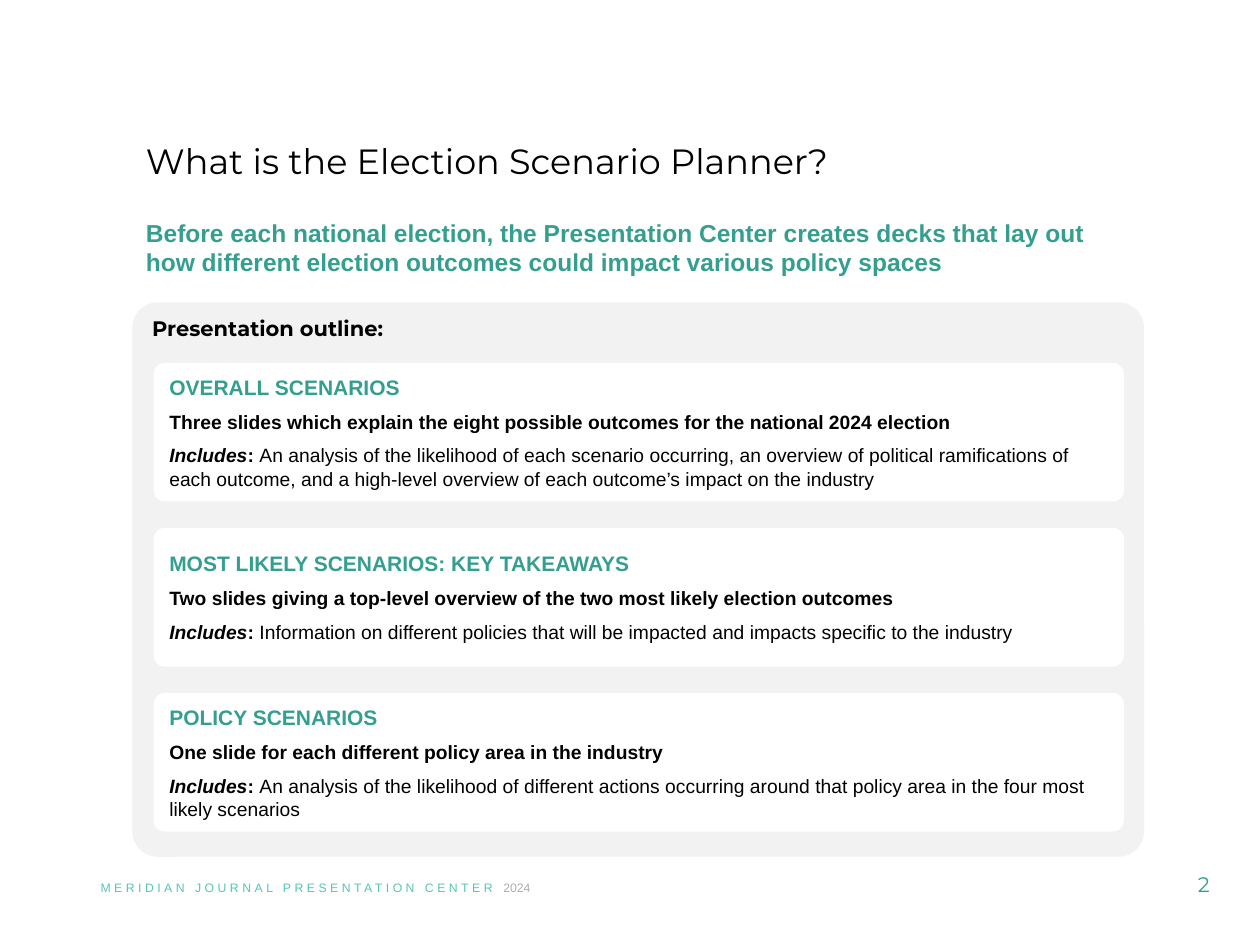
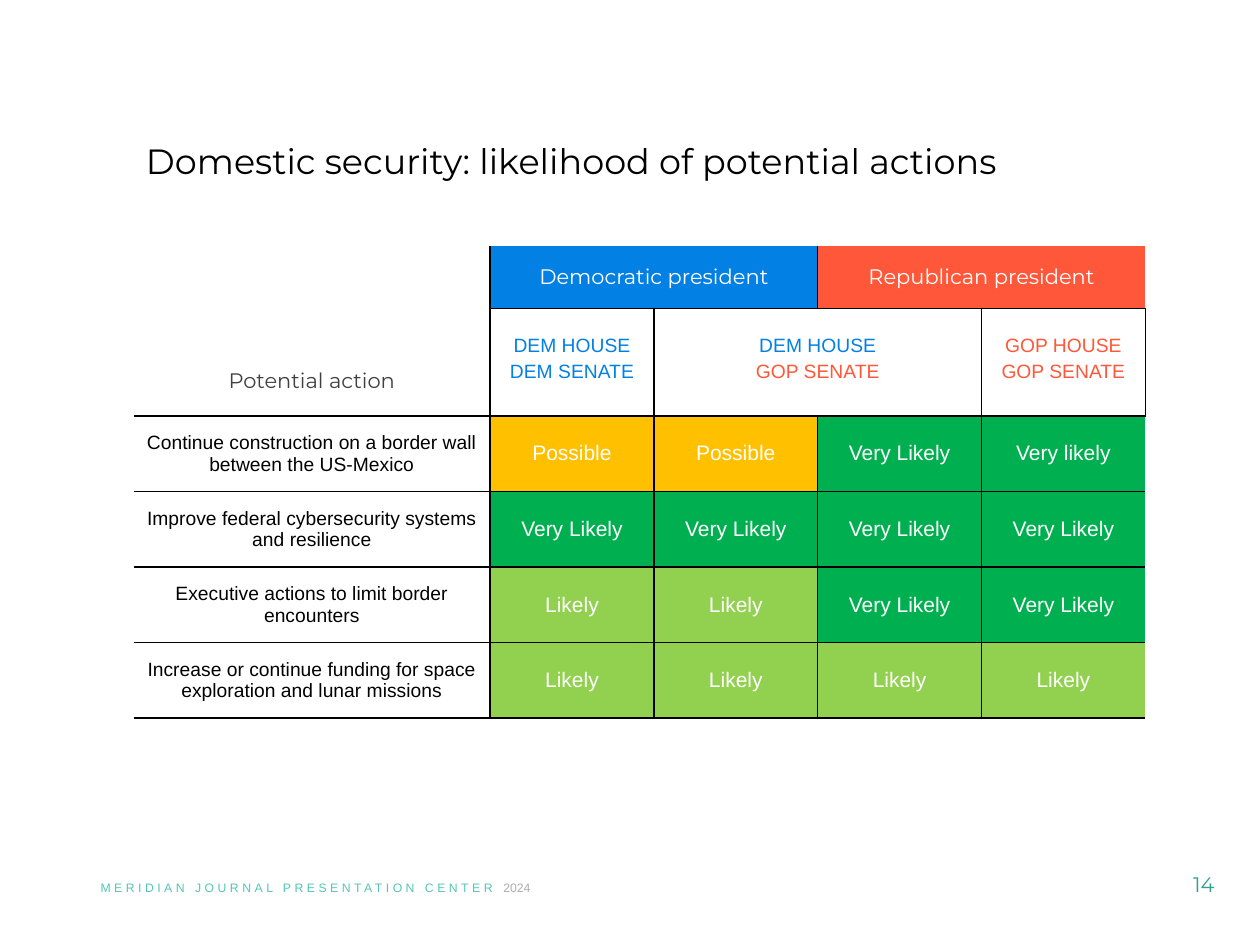
from lxml import etree
from pptx import Presentation
from pptx.dml.color import RGBColor
from pptx.enum.shapes import MSO_SHAPE
from pptx.enum.text import MSO_ANCHOR, PP_ALIGN
from pptx.oxml.ns import qn
from pptx.util import Inches, Pt

ROUNDED = MSO_SHAPE.ROUNDED_RECTANGLE
TOP, MIDDLE = MSO_ANCHOR.TOP, MSO_ANCHOR.MIDDLE
LEFT, CENTER = PP_ALIGN.LEFT, PP_ALIGN.CENTER

# Shared look
HEADING_FONT, BODY_FONT = "Montserrat", "Arial"
BLACK, WHITE, GREY = "000000", "FFFFFF", "F2F2F2"
TEAL, LIGHT_TEAL, YEAR_GREY, DARK_GREY = "359F8F", "55C6B5", "AFABAB", "404040"
DEM_BLUE, GOP_RED = "0380E3", "FF5739"
CONTENT_LEFT, CONTENT_WIDTH = 1.06, 8.03
NO_TABLE_STYLE = "{2D5ABB26-0587-4C30-8999-92F81FD0307C}"

# Outline boxes: heading, summary, what the part includes
OUTLINE = [
    ("OVERALL SCENARIOS",
     "Three slides which explain the eight possible outcomes for the national 2024 election",
     "An analysis of the likelihood of each scenario occurring, an overview of political "
     "ramifications of each outcome, and a high-level overview of each outcome’s impact "
     "on the industry"),
    ("MOST LIKELY SCENARIOS: KEY TAKEAWAYS",
     "Two slides giving a top-level overview of the two most likely election outcomes",
     "Information on different policies that will be impacted and impacts specific to the "
     "industry"),
    ("POLICY SCENARIOS",
     "One slide for each different policy area in the industry",
     "An analysis of the likelihood of different actions occurring around that policy area "
     "in the four most likely scenarios"),
]

# Likelihood table
COLUMN_WIDTHS = [2.83] + [1.3] * 4
ROW_HEIGHTS = [0.5, 0.3, 0.55] + [0.6] * 4
MERGES = [((0, 0), (1, 0)), ((0, 1), (0, 2)), ((0, 3), (0, 4)),
          ((1, 1), (2, 1)), ((1, 2), (2, 3)), ((1, 4), (2, 4))]
PRESIDENTS = [(1, "Democratic president", DEM_BLUE), (3, "Republican president", GOP_RED)]
CHAMBERS = [(1, "DEM HOUSE", "DEM SENATE"), (2, "DEM HOUSE", "GOP SENATE"),
            (4, "GOP HOUSE", "GOP SENATE")]
PARTY_COLORS = {"DEM": DEM_BLUE, "GOP": GOP_RED}
LIKELIHOOD_FILLS = {"possible": "FFC000", "likely": "92D050", "very likely": "00B050"}
ACTIONS = [
    ("Continue construction on a border wall between the US-Mexico",
     "Possible", "Possible", "Very Likely", "Very likely"),
    ("Improve federal cybersecurity systems and resilience",
     "Very Likely", "Very Likely", "Very Likely", "Very Likely"),
    ("Executive actions to limit border encounters",
     "Likely", "Likely", "Very Likely", "Very Likely"),
    ("Increase or continue funding for space exploration and lunar missions",
     "Likely", "Likely", "Likely", "Likely"),
]


def rgb(color):
    return RGBColor.from_string(color)


def add_run(paragraph, text, size, color, font=BODY_FONT, bold=False, italic=False, spacing=0):
    run = paragraph.add_run()
    run.text = text
    run.font.size = Pt(size)
    run.font.name = font
    run.font.bold = bold
    run.font.italic = italic
    run.font.color.rgb = rgb(color)
    if spacing:
        run.font._element.set("spc", str(spacing * 100))


def add_text(slide, left, top, width, height, anchor=TOP, align=LEFT):
    """Add a wrapping text box and return its first paragraph."""
    box = slide.shapes.add_textbox(Inches(left), Inches(top), Inches(width), Inches(height))
    box.text_frame.word_wrap = True
    box.text_frame.vertical_anchor = anchor
    paragraph = box.text_frame.paragraphs[0]
    paragraph.alignment = align
    return paragraph


def add_panel(slide, left, top, width, height, color, rounding, anchor):
    """Add a borderless rounded panel and return its text frame."""
    shape = slide.shapes.add_shape(ROUNDED, Inches(left), Inches(top),
                                   Inches(width), Inches(height))
    shape.adjustments[0] = rounding
    shape.shadow.inherit = False
    shape.fill.solid()
    shape.fill.fore_color.rgb = rgb(color)
    shape.line.fill.background()
    frame = shape.text_frame
    frame.word_wrap = True
    frame.vertical_anchor = anchor
    frame.paragraphs[0].alignment = LEFT
    return frame


def add_base_slide(presentation, title, number):
    """Add a blank slide with the shared title, footer and page number."""
    slide = presentation.slides.add_slide(presentation.slide_layouts[6])
    heading = add_text(slide, CONTENT_LEFT, 0.9, CONTENT_WIDTH, 0.79, MIDDLE)
    heading.line_spacing = 0.9
    add_run(heading, title, 20, BLACK, HEADING_FONT)
    footer = add_text(slide, 0.7, 6.94, 5.2, 0.22)
    add_run(footer, "MERIDIAN JOURNAL PRESENTATION CENTER ", 7, LIGHT_TEAL, spacing=2)
    add_run(footer, "2024", 7, YEAR_GREY)
    page = add_text(slide, 9.11, 6.82, 0.89, 0.4, MIDDLE, CENTER)
    add_run(page, str(number), 12, TEAL, HEADING_FONT)
    return slide


def add_outline_box(slide, top, heading, summary, includes):
    frame = add_panel(slide, 1.22, top, 7.7, 1.1, WHITE, 0.08, MIDDLE)
    frame.margin_left = Inches(0.1)
    frame.margin_right = Inches(0.05)
    paragraphs = [frame.paragraphs[0], frame.add_paragraph(), frame.add_paragraph()]
    for paragraph in paragraphs:
        paragraph.alignment = LEFT
        paragraph.space_after = Pt(6)
    add_run(paragraphs[0], heading, 12, TEAL, bold=True)
    add_run(paragraphs[1], summary, 11, BLACK, bold=True)
    add_run(paragraphs[2], "Includes", 11, BLACK, bold=True, italic=True)
    add_run(paragraphs[2], ": ", 11, BLACK, bold=True)
    add_run(paragraphs[2], includes, 11, BLACK)


def set_borders(cell, sides):
    """Draw 1 pt black lines on the given sides (L, R, T, B, in that order)."""
    properties = cell._tc.get_or_add_tcPr()
    for side in sides:
        line = etree.SubElement(properties, qn(f"a:ln{side}"), w=str(Pt(1)))
        fill = etree.SubElement(line, qn("a:solidFill"))
        etree.SubElement(fill, qn("a:srgbClr"), val=BLACK)


def fill_cell(cell, lines, size, font=BODY_FONT, fill=None, line_spacing=None):
    """Write (text, color) lines, centred, into a cell."""
    frame = cell.text_frame
    cell.vertical_anchor = MIDDLE
    for index, (text, color) in enumerate(lines):
        paragraph = frame.add_paragraph() if index else frame.paragraphs[0]
        paragraph.alignment = CENTER
        paragraph.space_after = Pt(6)
        if line_spacing:
            paragraph.line_spacing = Pt(line_spacing)
        add_run(paragraph, text, size, color, font)
    if fill:
        cell.fill.solid()
        cell.fill.fore_color.rgb = rgb(fill)


def draw_grid(table):
    """Merge the header cells and rule every line between separate areas."""
    rows, columns = len(ROW_HEIGHTS), len(COLUMN_WIDTHS)
    area = {(r, c): (r, c) for r in range(rows) for c in range(columns)}
    for first, last in MERGES:
        table.cell(*first).merge(table.cell(*last))
        for r in range(first[0], last[0] + 1):
            for c in range(first[1], last[1] + 1):
                area[r, c] = first
    area[2, 0] = (0, 0)  # no line between the blank corner and its label
    for (r, c), own in area.items():
        neighbors = {"L": (r, c - 1), "R": (r, c + 1), "T": (r - 1, c), "B": (r + 1, c)}
        sides = [side for side, spot in neighbors.items() if area.get(spot, own) != own]
        if r == rows - 1:
            sides.append("B")
        set_borders(table.cell(r, c), sides)


def shrink_empty_cells(table):
    """Keep blank cells from stretching their rows."""
    for cell in table.iter_cells():
        if not cell.text_frame.text:
            cell.margin_top = cell.margin_bottom = 0
            paragraph = cell.text_frame.paragraphs[0]._p
            etree.SubElement(paragraph, qn("a:endParaRPr"), sz="800")


def add_likelihood_table(slide):
    frame = slide.shapes.add_table(len(ROW_HEIGHTS), len(COLUMN_WIDTHS),
                                   Inches(CONTENT_LEFT), Inches(1.95),
                                   Inches(CONTENT_WIDTH), Inches(sum(ROW_HEIGHTS)))
    table = frame.table
    table.first_row = table.horz_banding = False
    table._tbl.tblPr.find(qn("a:tableStyleId")).text = NO_TABLE_STYLE
    for column, width in zip(table.columns, COLUMN_WIDTHS):
        column.width = Inches(width)
    for row, height in zip(table.rows, ROW_HEIGHTS):
        row.height = Inches(height)
    draw_grid(table)

    # Header rows
    for column, text, color in PRESIDENTS:
        fill_cell(table.cell(0, column), [(text, WHITE)], 12, HEADING_FONT, color)
    for column, *chambers in CHAMBERS:
        lines = [(chamber, PARTY_COLORS[chamber[:3]]) for chamber in chambers]
        fill_cell(table.cell(1, column), lines, 11, line_spacing=8.8)
    fill_cell(table.cell(2, 0), [("Potential action", DARK_GREY)], 12, HEADING_FONT)

    # Action rows
    for row, (action, *ratings) in enumerate(ACTIONS, start=3):
        fill_cell(table.cell(row, 0), [(action, BLACK)], 11)
        for column, rating in enumerate(ratings, start=1):
            fill_cell(table.cell(row, column), [(rating, WHITE)], 12,
                      fill=LIKELIHOOD_FILLS[rating.lower()])
    shrink_empty_cells(table)


def build_outline_slide(presentation):
    slide = add_base_slide(presentation, "What is the Election Scenario Planner?", 2)
    intro = add_text(slide, CONTENT_LEFT, 1.68, CONTENT_WIDTH, 0.57)
    add_run(intro, "Before each national election, the Presentation Center creates decks that "
            "lay out how different election outcomes could impact various policy spaces",
            14, TEAL, bold=True)
    panel = add_panel(slide, 1.05, 2.4, CONTENT_WIDTH, 4.4, GREY, 0.046, TOP)
    add_run(panel.paragraphs[0], "Presentation outline:", 12, BLACK, HEADING_FONT, bold=True)
    for index, part in enumerate(OUTLINE):
        add_outline_box(slide, 2.88 + 1.31 * index, *part)


def build_likelihood_slide(presentation):
    slide = add_base_slide(presentation,
                           "Domestic security: likelihood of potential actions", 14)
    add_likelihood_table(slide)


def main():
    presentation = Presentation()
    presentation.slide_width = Inches(10)
    presentation.slide_height = Inches(7.5)
    build_outline_slide(presentation)
    build_likelihood_slide(presentation)
    presentation.save("out.pptx")


if __name__ == "__main__":
    main()
